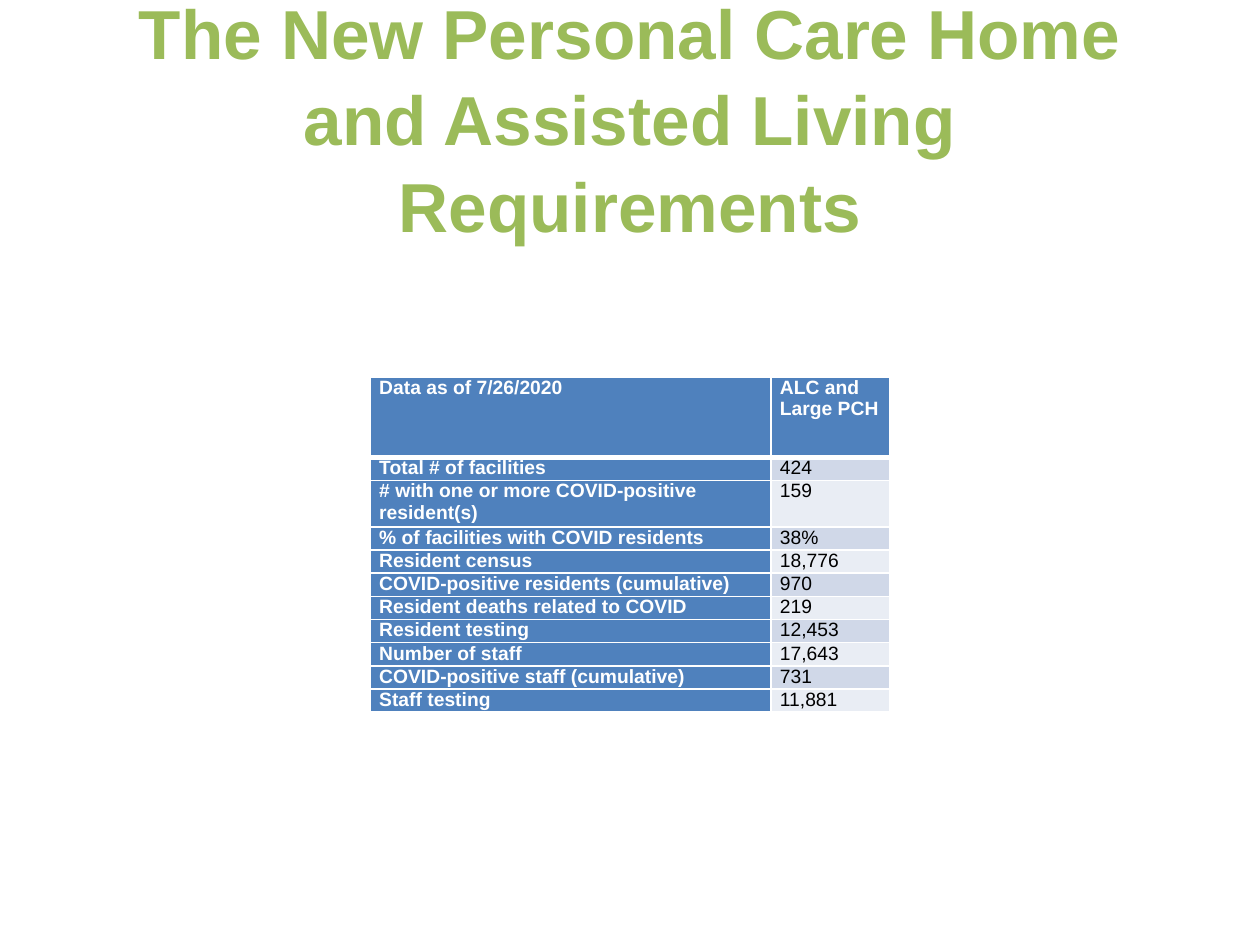
from lxml import etree
from pptx import Presentation
from pptx.dml.color import RGBColor
from pptx.enum.text import MSO_ANCHOR, PP_ALIGN
from pptx.oxml.ns import qn
from pptx.util import Inches, Pt

CENTER = PP_ALIGN.CENTER
MIDDLE = MSO_ANCHOR.MIDDLE
COLORS = {
    "title": "9BBB59",
    "label": "4F81BD",
    "odd": "D0D8E8",
    "even": "E9EDF4",
    "light": "FFFFFF",
    "dark": "000000",
}
ROWS = [
    ("Data as of 7/26/2020", "ALC and\nLarge PCH"),
    ("Total # of facilities", "424"),
    ("# with one or more COVID-positive resident(s)", "159"),
    ("% of facilities with COVID residents", "38%"),
    ("Resident census", "18,776"),
    ("COVID-positive residents (cumulative)", "970"),
    ("Resident deaths related to COVID", "219"),
    ("Resident testing", "12,453"),
    ("Number of staff", "17,643"),
    ("COVID-positive staff (cumulative)", "731"),
    ("Staff testing", "11,881"),
]
COLUMN_WIDTHS = [3.18, 0.94]
HEADER_HEIGHT, LINE_HEIGHT = 0.64, 0.17


def add_run(paragraph, text, size, color, bold):
    run = paragraph.add_run()
    run.text = text
    run.font.name = "Arial"
    run.font.size = Pt(size)
    run.font.bold = bold
    run.font.color.rgb = RGBColor.from_string(COLORS[color])


def set_borders(cell, bottom_width):
    properties = cell._tc.get_or_add_tcPr()
    widths = {"a:lnL": 1, "a:lnR": 1, "a:lnT": 1, "a:lnB": bottom_width}
    for position, (tag, width) in enumerate(widths.items()):
        line = etree.Element(qn(tag), w=str(Pt(width)))
        fill = etree.SubElement(line, qn("a:solidFill"))
        etree.SubElement(fill, qn("a:srgbClr"), val=COLORS["light"])
        properties.insert(position, line)


presentation = Presentation()
presentation.slide_width = Inches(10)
presentation.slide_height = Inches(7.5)
slide = presentation.slides.add_slide(presentation.slide_layouts[6])
width, height = presentation.slide_width, presentation.slide_height

# Title
title = slide.shapes.add_textbox(
    int(width * 0.05), int(height * 0.04), int(width * 0.9), Inches(1.25))
title_frame = title.text_frame
title_frame.word_wrap = True
title_frame.vertical_anchor = MIDDLE
paragraph = title_frame.paragraphs[0]
paragraph.alignment = CENTER
paragraph.line_spacing = 1.04
add_run(paragraph, "The New Personal Care Home and Assisted Living Requirements",
        39.6, "title", True)

# Table, centred across the slide
table_width = Inches(sum(COLUMN_WIDTHS))
table_height = Inches(HEADER_HEIGHT + LINE_HEIGHT * len(ROWS))
table = slide.shapes.add_table(
    len(ROWS), len(COLUMN_WIDTHS), (width - table_width) // 2, Inches(2.99),
    table_width, table_height).table
for column, column_width in zip(table.columns, COLUMN_WIDTHS):
    column.width = Inches(column_width)

for row_index, values in enumerate(ROWS):
    is_header = row_index == 0
    table.rows[row_index].height = Inches(HEADER_HEIGHT if is_header else LINE_HEIGHT)
    for column_index, value in enumerate(values):
        is_label = is_header or column_index == 0
        band = "odd" if row_index % 2 else "even"
        cell = table.cell(row_index, column_index)
        cell.margin_left = cell.margin_right = Inches(0.07)
        cell.margin_top = cell.margin_bottom = 0
        cell.fill.solid()
        cell.fill.fore_color.rgb = RGBColor.from_string(
            COLORS["label" if is_label else band])
        set_borders(cell, 3 if is_header else 1)
        for line_index, text in enumerate(value.split("\n")):
            frame = cell.text_frame
            paragraph = frame.add_paragraph() if line_index else frame.paragraphs[0]
            add_run(paragraph, text, 11, "light" if is_label else "dark", is_label)

presentation.save("out.pptx")
